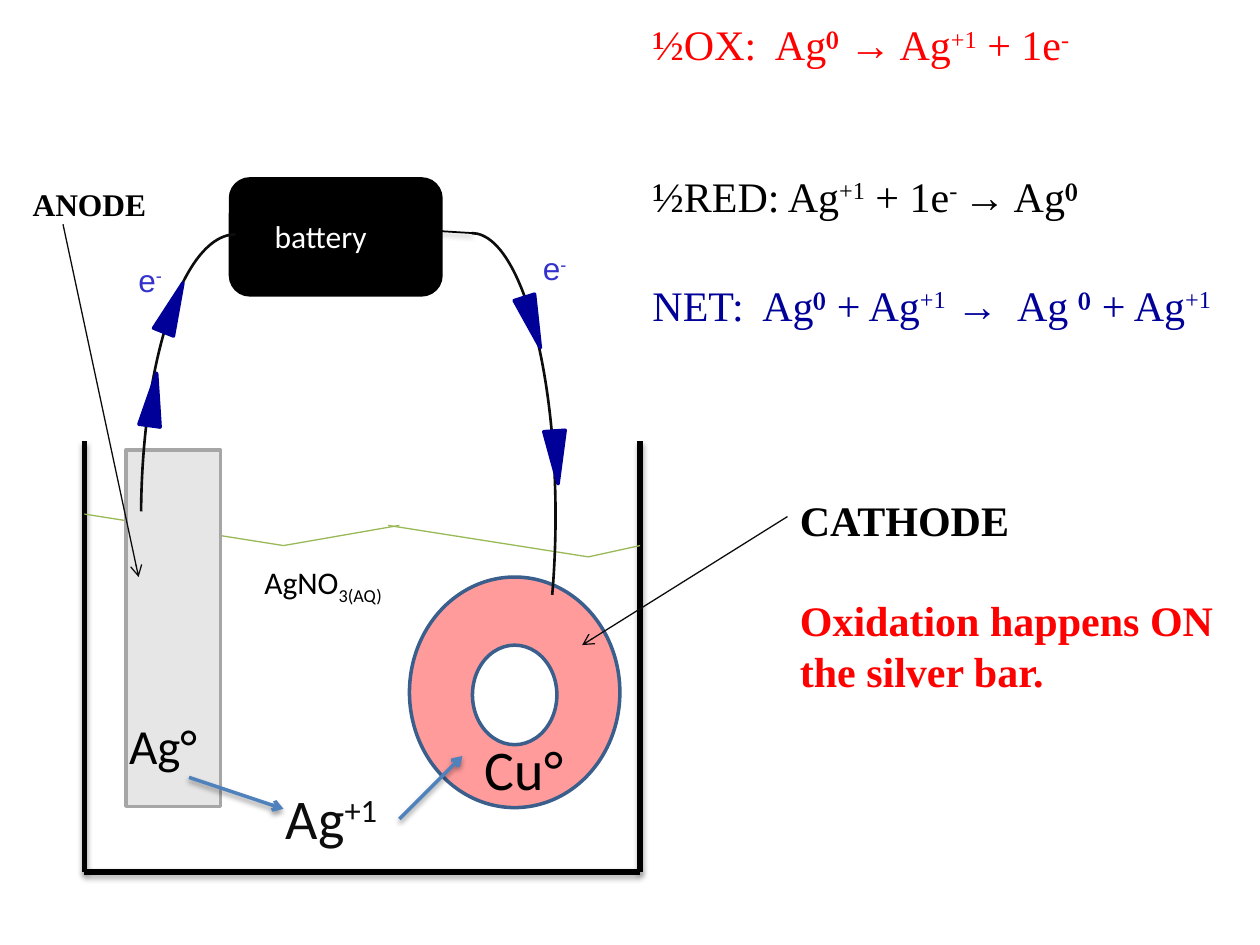
from lxml import etree
from pptx import Presentation
from pptx.dml.color import RGBColor
from pptx.enum.shapes import MSO_CONNECTOR as Connector, MSO_SHAPE as Shape
from pptx.enum.text import MSO_ANCHOR as Anchor, MSO_AUTO_SIZE as AutoSize, PP_ALIGN as Align
from pptx.oxml.ns import qn
from pptx.util import Inches, Pt

BLACK = RGBColor(0x00, 0x00, 0x00)
WHITE = RGBColor(0xFF, 0xFF, 0xFF)
INK = RGBColor(0x0D, 0x0D, 0x0D)
RED = RGBColor(0xFF, 0x00, 0x00)
NAVY = RGBColor(0x00, 0x00, 0x99)
ELECTRON = RGBColor(0x33, 0x33, 0xCC)
WATER = RGBColor(0x98, 0xB9, 0x55)
ION_BLUE = RGBColor(0x4F, 0x81, 0xBD)
SILVER = RGBColor(0xE6, 0xE6, 0xE6)
SILVER_EDGE = RGBColor(0xA6, 0xA6, 0xA6)
COPPER = RGBColor(0xFF, 0x9B, 0x9B)
RING_EDGE = RGBColor(0x3A, 0x5F, 0x8C)
SERIF = "Times New Roman"

presentation = Presentation()
presentation.slide_width, presentation.slide_height = Inches(10), Inches(7.5)
slide = presentation.slides.add_slide(presentation.slide_layouts[6])


def add_text(box, paragraphs, size=18, font="Calibri", color=BLACK, bold=False,
             align=Align.LEFT, anchor=Anchor.TOP):
    """Each paragraph is (runs, color or None, space before); a run is (text, baseline %)."""
    frame = slide.shapes.add_textbox(*map(Inches, box)).text_frame
    frame.word_wrap = True
    frame.auto_size = AutoSize.SHAPE_TO_FIT_TEXT
    frame.vertical_anchor = anchor
    for index, (runs, own_color, gap) in enumerate(paragraphs):
        paragraph = frame.paragraphs[0] if index == 0 else frame.add_paragraph()
        paragraph.alignment = align
        if gap:
            paragraph.space_before = Pt(gap)
        for text, baseline in runs:
            run = paragraph.add_run()
            run.text = text
            run.font.size, run.font.name, run.font.bold = Pt(size), font, bold
            run.font.color.rgb = own_color or color
            if baseline:
                run._r.get_or_add_rPr().set("baseline", str(baseline * 1000))


def add_line(start, end, color, width, arrow=False, shadow=0):
    """Straight line; shadow is its opacity in percent."""
    line = slide.shapes.add_connector(Connector.STRAIGHT, *map(Inches, (*start, *end)))
    line.line.color.rgb = color
    line.line.width = Pt(width)
    if arrow:
        etree.SubElement(line.line._get_or_add_ln(), qn("a:tailEnd"), type="arrow")
    effects = etree.SubElement(line._element.spPr, qn("a:effectLst"))
    if shadow:
        outer = etree.SubElement(effects, qn("a:outerShdw"), blurRad=str(Pt(3.1)),
                                 dist=str(Pt(1.8)), dir="5400000", rotWithShape="0")
        tint = etree.SubElement(outer, qn("a:srgbClr"), val="000000")
        etree.SubElement(tint, qn("a:alpha"), val=str(shadow * 1000))


# Beaker
left, right, rim, base = 0.67, 5.08, 3.5, 6.92
for start, end in [((left, rim), (left, base)), ((right, rim), (right, base)),
                   ((left, base), (right, base))]:
    add_line(start, end, BLACK, 3, shadow=35)

# Water surface
for start, end in [((left, 4.08), (2.25, 4.33)), ((3.08, 4.17), (4.67, 4.42)),
                   ((2.25, 4.33), (3.17, 4.17)), ((4.67, 4.42), (right, 4.33))]:
    add_line(start, end, WATER, 0.75)
add_text((2, 4.42, 2.33, 0.4), [([("AgNO", 0), ("3(AQ)", -25)], None, 0)])

# Silver bar, battery, copper ring, wires and electron flow markers
parts = [
    (Shape.RECTANGLE, (1, 3.57, 0.75, 2.83), SILVER, SILVER_EDGE, 0),
    (Shape.ROUNDED_RECTANGLE, (1.83, 1.42, 1.67, 0.92), BLACK, BLACK, 0),
    (Shape.OVAL, (3.25, 4.58, 1.67, 1.83), COPPER, RING_EDGE, 0),
    (Shape.OVAL, (3.75, 5.12, 0.67, 0.79), WHITE, RING_EDGE, 0),
    (Shape.ARC, (3.08, 1.85, 1.33, 4.49), None, INK, 0),
    (Shape.ARC, (1.12, 1.86, 1.5, 4.49), None, INK, 0),
]
markers = [(4.14, 2.35, 162.4), (4.33, 3.42, 176.1), (1.29, 2.23, 21.6), (1.13, 2.96, 7.8)]
parts += [(Shape.ISOSCELES_TRIANGLE, (x, y, 0.17, 0.42), NAVY, NAVY, turn)
          for x, y, turn in markers]
wires = []
for kind, box, fill, edge, turn in parts:
    shape = slide.shapes.add_shape(kind, *map(Inches, box))
    shape.shadow.inherit = False
    shape.rotation = turn
    shape.line.color.rgb = edge
    shape.line.width = Pt(2 if fill is not None else 1.5)
    if fill is None:
        shape.fill.background()
        wires.append(shape)
    else:
        shape.fill.solid()
        shape.fill.fore_color.rgb = fill

# Wire sweeps: start and end angle, the anode wire mirrored
for wire, end_angle in zip(wires, (26.65, 213.91)):
    wire.adjustments[0], wire.adjustments[1] = 162, end_angle
wires[1]._element.spPr.find(qn("a:xfrm")).set("flipH", "1")
add_line((3.42, 1.83), (3.75, 1.85), BLACK, 1, shadow=35)

# Labels in the cell
add_text((1.92, 1.67, 1.25, 0.4), [([("battery", 0)], None, 0)], color=WHITE, align=Align.CENTER)
add_text((0.92, 5.63, 0.83, 0.57), [([("Ag° ", 0)], None, 0)], size=28, align=Align.RIGHT)
add_text((3.75, 5.78, 1.33, 0.64), [([("Cu°", 0)], None, 0)], size=32)
for x, y in [(4.21, 1.93), (1, 2.02)]:
    add_text((x, y, 0.42, 0.4), [([("e", 0), ("-", 30)], None, 0)], font="Arial", color=ELECTRON)
add_text((2.17, 6.17, 1.17, 0.64), [([("Ag", 0), ("+1", 30)], None, 0)], size=32, color=INK)

# Ion movement
add_line((3.17, 6.5), (3.67, 6), ION_BLUE, 2, arrow=True, shadow=38)
add_line((1.5, 6.17), (2.25, 6.42), ION_BLUE, 2, arrow=True, shadow=38)

# Electrode names with pointers
add_text((6.25, 3.45, 3.51, 2.12),
         [([("CATHODE", 0)], None, 0),
          ([("Oxidation happens ON the silver bar.", 0)], RED, 28.8)],
         size=24, font=SERIF, bold=True, anchor=Anchor.BOTTOM)
add_line((6.25, 4.1), (4.62, 5.12), INK, 0.75, arrow=True)
add_text((0.16, 1.42, 1.58, 0.71), [([("ANODE", 0)], None, 0)], font=SERIF, bold=True)
add_line((0.5, 1.78), (1.1, 4.58), INK, 0.75, arrow=True)

# Half reactions and net reaction
add_text((5.08, 0.1, 4.92, 2.32), [
    ([("½OX:  Ag⁰ → Ag", 0), ("+1", 30), (" + 1e", 0), ("-", 30)], RED, 0),
    ([("½RED: Ag", 0), ("+1", 30), (" + 1e", 0), ("- ", 30), ("→ Ag⁰", 0)], BLACK, 57.6),
    ([("NET:  Ag⁰ + Ag", 0), ("+1", 30), (" →  Ag ⁰ + Ag", 0), ("+1", 30)], NAVY, 33.6),
], size=24, font=SERIF)

presentation.save("out.pptx")
